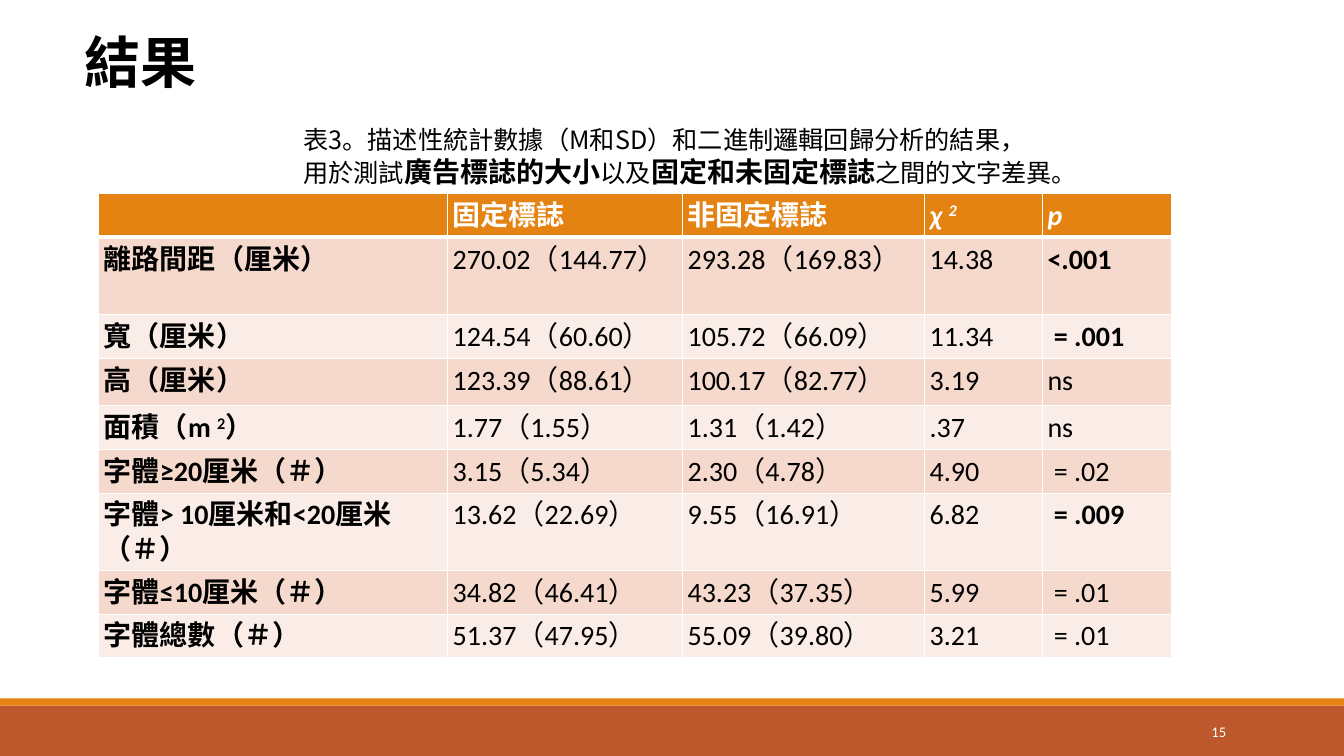
from lxml import etree
from pptx import Presentation
from pptx.dml.color import RGBColor
from pptx.enum import shapes, text
from pptx.oxml import ns
from pptx.util import Inches, Pt

BLACK = RGBColor(0, 0, 0)
WHITE = RGBColor(0xFF, 0xFF, 0xFF)
ORANGE = RGBColor(0xE4, 0x83, 0x12)
RUST = RGBColor(0xBD, 0x58, 0x2C)
BANDS = (RGBColor(0xF5, 0xD9, 0xCC), RGBColor(0xFA, 0xED, 0xE7))
LATIN, CJK = "Calibri", "Noto Sans CJK SC"

BOLD = {"bold": True}
KEY = {"bold": True, "size": 20}
SUPER = {"superscript": True}

COLUMN_WIDTHS = (3.46, 2.33, 2.4, 1.17, 1.28)
ROW_HEIGHTS = (0.35, 0.41, 0.41, 0.47, 0.41, 0.41, 0.41, 0.41, 0.41)
HEADINGS = ("", "固定標誌", "非固定標誌",
            [("χ ", {"italic": True}), ("2", {"italic": True, **SUPER})],
            [("p", {"italic": True})])
RESULTS = (
    ("離路間距（厘米）", "270.02（144.77）", "293.28（169.83）", "14.38", [("<.001", BOLD)]),
    ("寬（厘米）", "124.54（60.60）", "105.72（66.09）", "11.34", [(" = .001", BOLD)]),
    ("高（厘米）", "123.39（88.61）", "100.17（82.77）", "3.19", "ns"),
    ([("面積（m ", {}), ("2", SUPER), ("）", {})],
     "1.77（1.55）", "1.31（1.42）", ".37", "ns"),
    ("字體≥20厘米（＃）", "3.15（5.34）", "2.30（4.78）", "4.90", " = .02"),
    ("字體> 10厘米和<20厘米（＃）", "13.62（22.69）", "9.55（16.91）", "6.82",
     [(" ", {}), ("= .009", BOLD)]),
    ("字體≤10厘米（＃）", "34.82（46.41）", "43.23（37.35）", "5.99", " = .01"),
    ("字體總數（＃）", "51.37（47.95）", "55.09（39.80）", "3.21", " = .01"),
)
CAPTION = (
    "表3。描述性統計數據（M和SD）和二進制邏輯回歸分析的結果，",
    [("用於測試", {}), ("廣告標誌的大小", KEY), ("以及", {}),
     ("固定和未固定標誌", KEY), ("之間的文字差異。", {})],
)


def write(paragraph, content, align=text.PP_ALIGN.LEFT, **base):
    """Fill a paragraph with a string or with (string, format) pieces."""
    paragraph.alignment = align
    pieces = [(content, {})] if isinstance(content, str) else content
    for words, changes in pieces:
        style = {"size": 20, "font": LATIN, "color": BLACK, "bold": False,
                 "italic": False, "superscript": False, **base, **changes}
        run = paragraph.add_run()
        run.text = words
        run.font.name = style["font"]
        run.font.size = Pt(style["size"])
        run.font.bold = style["bold"]
        run.font.italic = style["italic"]
        run.font.color.rgb = style["color"]
        properties = run._r.get_or_add_rPr()
        if style["superscript"]:
            properties.set("baseline", "30000")
        etree.SubElement(properties, ns.qn("a:ea"), typeface=LATIN)


def place(shape, left, top, width, height):
    shape.left, shape.top = Inches(left), Inches(top)
    shape.width, shape.height = Inches(width), Inches(height)


def add_footer(slide, left, top, width, height):
    # Rust band with an orange strip along its top
    strip = 0.07
    for offset, depth, color in ((strip, height - strip, RUST), (0, strip, ORANGE)):
        band = slide.shapes.add_shape(
            shapes.MSO_SHAPE.RECTANGLE, Inches(left), Inches(top + offset),
            Inches(width), Inches(depth))
        band.shadow.inherit = False
        band.fill.solid()
        band.fill.fore_color.rgb = color
        band.line.fill.background()
    # Page number
    page = slide.shapes.add_textbox(Inches(left + 10.83), Inches(top + 0.13),
                                    Inches(1.43), Inches(0.4))
    page.text_frame.word_wrap = True
    page.text_frame.vertical_anchor = text.MSO_ANCHOR.MIDDLE
    write(page.text_frame.paragraphs[0], "15", align=text.PP_ALIGN.RIGHT,
          size=10.5, color=WHITE)


def add_title(slide, left, top, width, height):
    title = slide.shapes.title
    place(title, left, top, width, height)
    frame = title.text_frame
    frame.word_wrap = True
    frame.vertical_anchor = text.MSO_ANCHOR.TOP
    frame.auto_size = text.MSO_AUTO_SIZE.SHAPE_TO_FIT_TEXT
    write(frame.paragraphs[0], "結果", size=40, font=CJK, bold=True)


def add_caption(slide, left, top, width, height):
    caption = slide.shapes.add_textbox(Inches(left), Inches(top),
                                       Inches(width), Inches(height))
    frame = caption.text_frame
    frame.word_wrap = True
    frame.auto_size = text.MSO_AUTO_SIZE.SHAPE_TO_FIT_TEXT
    for index, line in enumerate(CAPTION):
        paragraph = frame.add_paragraph() if index else frame.paragraphs[0]
        write(paragraph, line, size=18, font=CJK)


def set_borders(cell, top, bottom):
    properties = cell._tc.get_or_add_tcPr()
    for index, (side, points) in enumerate(
            (("lnL", 1), ("lnR", 1), ("lnT", top), ("lnB", bottom))):
        line = etree.Element(ns.qn(f"a:{side}"), w=str(Pt(points)))
        fill = etree.SubElement(line, ns.qn("a:solidFill"))
        etree.SubElement(fill, ns.qn("a:srgbClr"), val=str(WHITE))
        properties.insert(index, line)


def add_results(slide, left, top, width, height):
    rows = (HEADINGS,) + RESULTS
    table = slide.shapes.add_table(
        len(rows), len(HEADINGS), Inches(left), Inches(top),
        Inches(width), Inches(height)).table
    for column, size in zip(table.columns, COLUMN_WIDTHS):
        column.width = Inches(size)
    for row, size in zip(table.rows, ROW_HEIGHTS):
        row.height = Inches(size)
    for r, values in enumerate(rows):
        for c, value in enumerate(values):
            cell = table.cell(r, c)
            cell.margin_left = cell.margin_right = Inches(0.05)
            cell.margin_top = cell.margin_bottom = Inches(0.05)
            cell.fill.solid()
            cell.fill.fore_color.rgb = BANDS[(r - 1) % 2] if r else ORANGE
            set_borders(cell, top=3 if r == 1 else 1, bottom=1 if r else 3)
            if value:
                write(cell.text_frame.paragraphs[0], value,
                      bold=r == 0 or c == 0, color=BLACK if r else WHITE)


def main():
    deck = Presentation()
    deck.slide_width, deck.slide_height = Inches(13.33), Inches(7.5)
    slide = deck.slides.add_slide(deck.slide_layouts[5])
    add_footer(slide, 0, 6.93, 13.33, 0.57)
    add_title(slide, 0.74, 0.22, 3.9, 0.77)
    add_results(slide, 0.98, 1.92, sum(COLUMN_WIDTHS), sum(ROW_HEIGHTS))
    add_caption(slide, 2.91, 1.18, 7.92, 0.74)
    deck.save("out.pptx")


if __name__ == "__main__":
    main()
